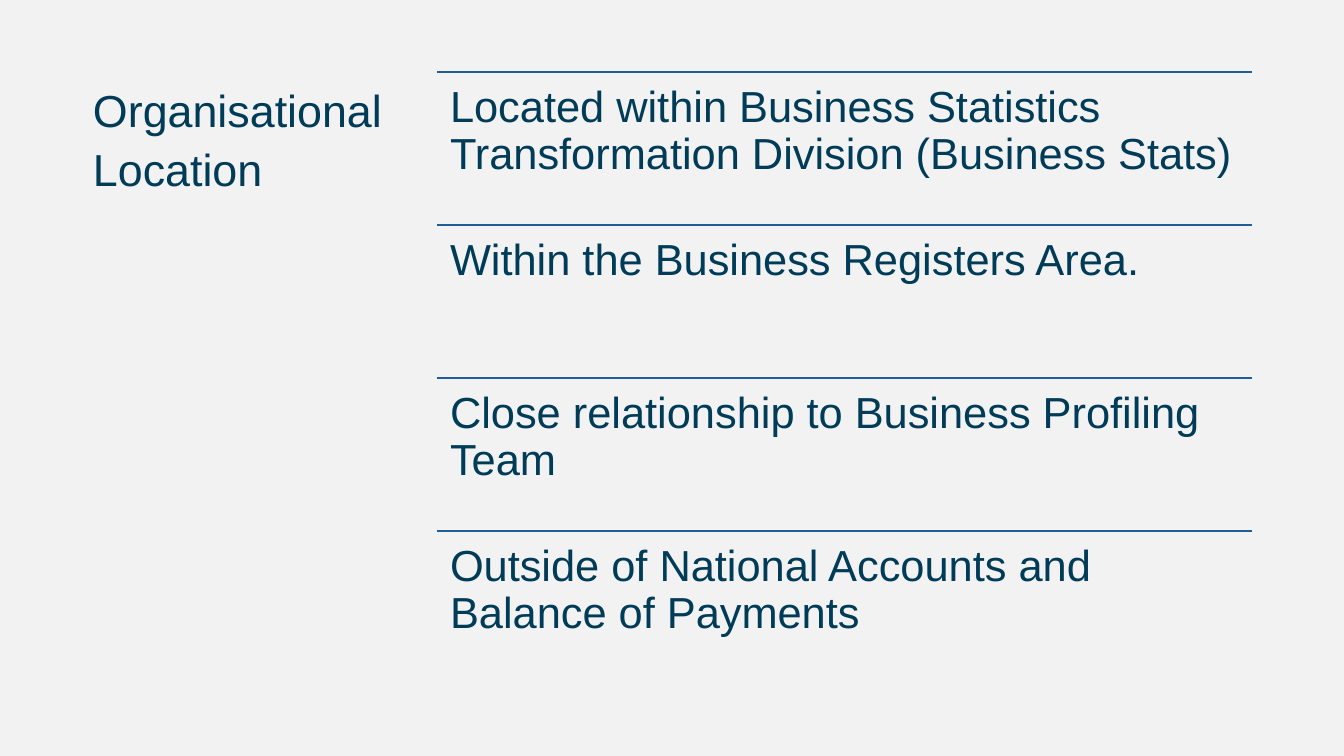
from lxml.etree import SubElement
from pptx import Presentation
from pptx.dml.color import RGBColor
from pptx.enum.shapes import MSO_CONNECTOR
from pptx.enum.text import MSO_ANCHOR, MSO_AUTO_SIZE, PP_ALIGN
from pptx.oxml.ns import qn
from pptx.util import Pt

HEADING = "Organisational Location"
POINTS = [
    "Located within Business Statistics Transformation Division (Business Stats)",
    "Within the Business Registers Area.",
    "Close relationship to Business Profiling Team",
    "Outside of National Accounts and Balance of Payments",
]
BACKGROUND, INK, RULE = "F2F2F2", "003B57", "205F95"
TOP = 72
HEADING_LEFT, HEADING_WIDTH, HEADING_HEIGHT = 93, 310, 532
POINT_LEFT, POINT_WIDTH, POINT_HEIGHT = 437, 815, 153
HEADING_FORMAT = {"size": Pt(32), "line_spacing": 1.1, "space_after": Pt(10), "insets": (0, 5)}
POINT_FORMAT = {"size": Pt(31), "line_spacing": 0.9, "space_after": Pt(11), "insets": (13, 13)}


def px(length):
    return round(length * 914400 / 100.8)


def colour(value):
    return RGBColor.from_string(value)


def write(shape, wording, style):
    frame = shape.text_frame
    side, edge = map(px, style["insets"])
    settings = {
        "word_wrap": True,
        "auto_size": MSO_AUTO_SIZE.NONE,
        "vertical_anchor": MSO_ANCHOR.TOP,
        "margin_left": side,
        "margin_right": side,
        "margin_top": edge,
        "margin_bottom": edge,
    }
    for name, value in settings.items():
        setattr(frame, name, value)
    frame.text = wording
    paragraph = frame.paragraphs[0]
    paragraph.alignment = PP_ALIGN.LEFT
    paragraph.space_before = Pt(0)
    for name in ("line_spacing", "space_after"):
        setattr(paragraph, name, style[name])
    font = paragraph.runs[0].font
    font.name, font.size = "Arial", style["size"]
    font.color.rgb = colour(INK)


def add_rule(slide, top):
    rule = slide.shapes.add_connector(
        MSO_CONNECTOR.STRAIGHT, px(POINT_LEFT), px(top), px(POINT_LEFT + POINT_WIDTH), px(top)
    )
    rule.line.color.rgb = colour(RULE)
    rule.line.width = Pt(1)
    SubElement(rule._element.spPr, qn("a:effectLst"))


def main():
    deck = Presentation()
    deck.slide_width, deck.slide_height = px(1344), px(756)
    slide = deck.slides.add_slide(deck.slide_layouts[5])
    slide.background.fill.solid()
    slide.background.fill.fore_color.rgb = colour(BACKGROUND)

    heading = slide.shapes.title
    heading.left, heading.top = px(HEADING_LEFT), px(TOP)
    heading.width, heading.height = px(HEADING_WIDTH), px(HEADING_HEIGHT)
    write(heading, HEADING, HEADING_FORMAT)

    for row, point in enumerate(POINTS):
        top = TOP + row * POINT_HEIGHT
        add_rule(slide, top)
        point_area = slide.shapes.add_textbox(
            px(POINT_LEFT), px(top), px(POINT_WIDTH), px(POINT_HEIGHT)
        )
        write(point_area, point, POINT_FORMAT)

    deck.save("out.pptx")


if __name__ == "__main__":
    main()
